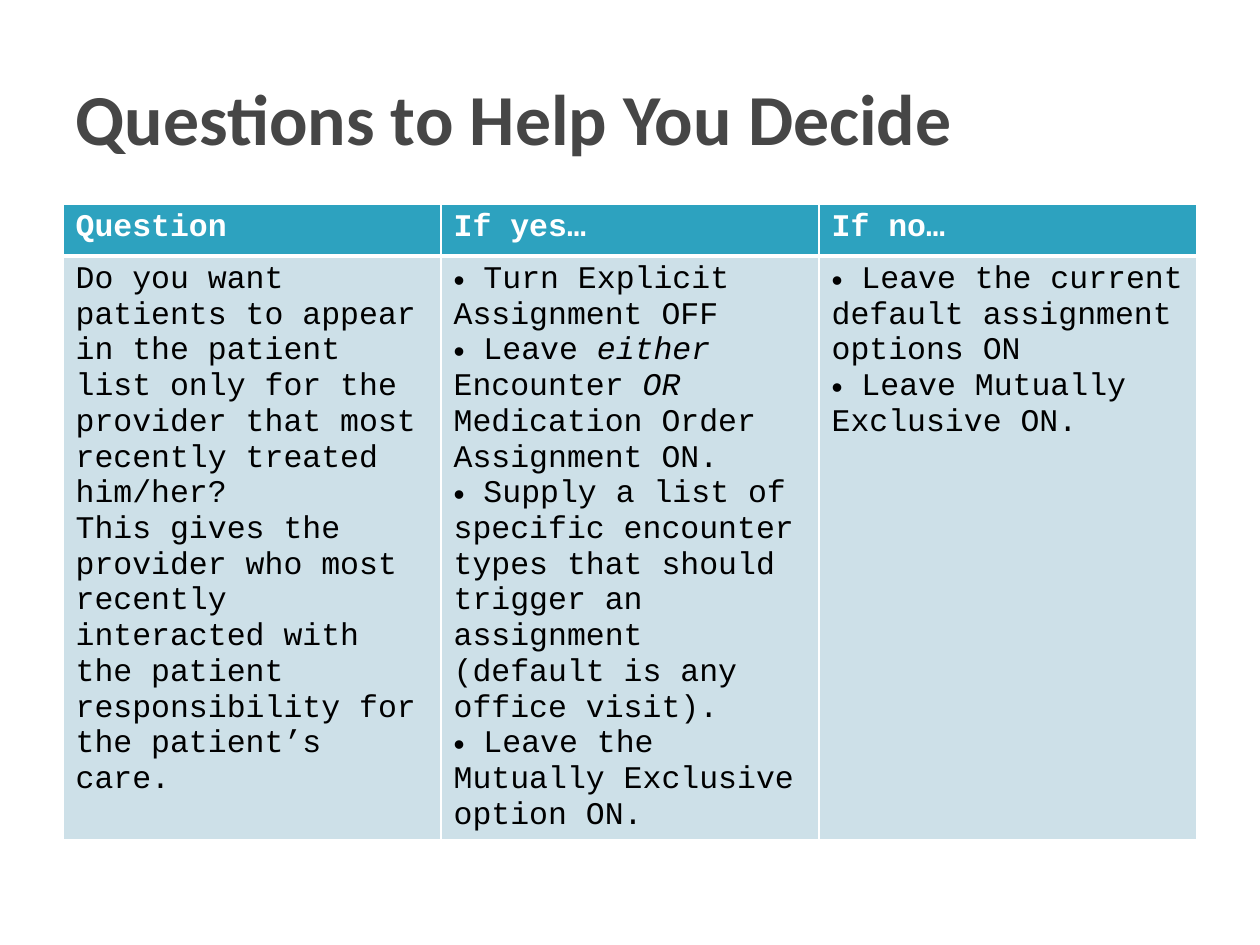
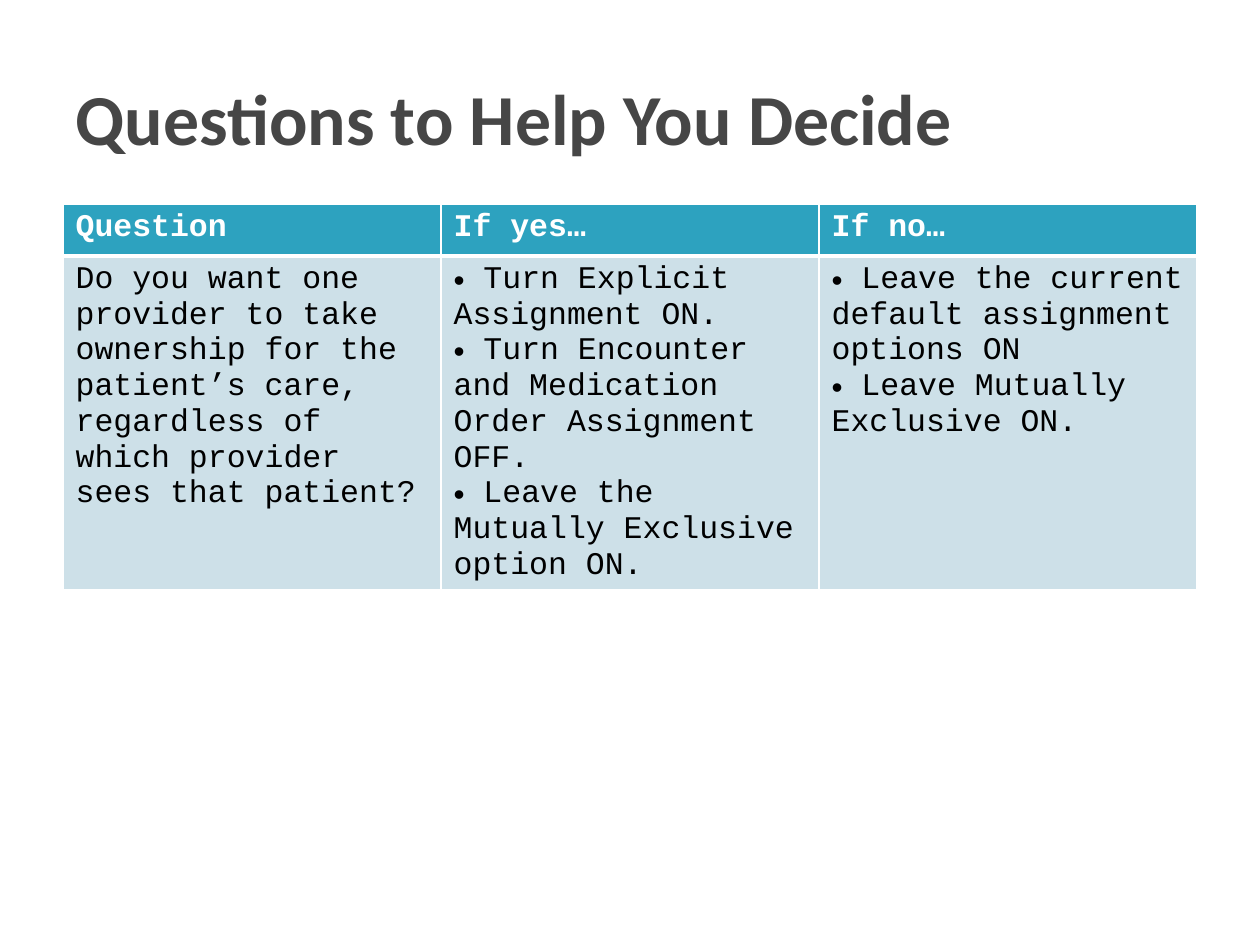
from lxml import etree
from pptx import Presentation
from pptx.dml.color import RGBColor
from pptx.enum.text import MSO_ANCHOR, MSO_AUTO_SIZE, PP_ALIGN
from pptx.oxml.ns import qn
from pptx.util import Pt

LEFT, MIDDLE, FIXED = PP_ALIGN.LEFT, MSO_ANCHOR.MIDDLE, MSO_AUTO_SIZE.NONE
SCALE = 914400 / 126
HUES = {"title": "464646", "head": "2DA2BF", "body": "CDE0E8",
        "light": "FFFFFF", "dark": "000000"}
TITLE = "Questions to Help You Decide"
HEADS = ["Question", "If yes…", "If no…"]
STAY = [" Leave the current default assignment options ON",
        " Leave Mutually Exclusive ON."]
KEEP = " Leave the Mutually Exclusive option ON."
PAGES = [
    (582,
     "Do you want patients to appear in the patient list only for the "
     "provider that most recently treated him/her?\n"
     "This gives the provider who most recently interacted with the patient "
     "responsibility for the patient’s care.",
     [" Turn Explicit Assignment OFF",
      " Leave *either* Encounter *OR* Medication Order Assignment ON.",
      " Supply a list of specific encounter types that should trigger an "
      "assignment (default is any office visit).",
      KEEP]),
    (332,
     "Do you want one provider to take ownership for the patient’s care, "
     "regardless of which provider sees that patient?",
     [" Turn Explicit Assignment ON.",
      " Turn Encounter and Medication Order Assignment OFF.",
      KEEP]),
]


def px(num):
    return round(num * SCALE)


def write(para, text, face, size, hue, bold):
    for i, part in enumerate(text.split("*")):
        for j, line in enumerate(part.split("\n")):
            if j:
                para.add_line_break()
            run = para.add_run()
            run.text = line
            font = run.font
            font.name, font.size, font.bold = face, Pt(size), bold
            font.italic = i % 2 == 1
            font.color.rgb = RGBColor.from_string(HUES[hue])


deck = Presentation()
deck.slide_width, deck.slide_height = px(1260), px(945)

for tall, ask, yes in PAGES:
    slide = deck.slides.add_slide(deck.slide_layouts[5])
    title = slide.shapes.title
    title.left, title.top = px(63), px(38)
    title.width, title.height = px(1134), px(158)
    frame = title.text_frame
    frame.auto_size, frame.vertical_anchor = FIXED, MIDDLE
    frame.paragraphs[0].alignment = LEFT
    write(frame.paragraphs[0], TITLE, "Calibri", 41, "title", True)

    table = slide.shapes.add_table(
        2, 3, px(63), px(204), px(1134), px(52 + tall)).table
    table.rows[0].height, table.rows[1].height = px(52), px(tall)
    rows = [[[head] for head in HEADS], [[ask], yes, STAY]]
    for r, row in enumerate(rows):
        for c, lines in enumerate(row):
            cell = table.cell(r, c)
            edges = {"L": 1, "R": 1, "T": 3 if r else 1, "B": 1 if r else 3}
            for side, wide in edges.items():
                edge = etree.SubElement(cell._tc.get_or_add_tcPr(),
                                        qn("a:ln" + side), w=str(Pt(wide)))
                fill = etree.SubElement(edge, qn("a:solidFill"))
                etree.SubElement(fill, qn("a:srgbClr"), val=HUES["light"])
            cell.fill.solid()
            cell.fill.fore_color.rgb = RGBColor.from_string(
                HUES["body" if r else "head"])
            for n, line in enumerate(lines):
                frame = cell.text_frame
                para = frame.add_paragraph() if n else frame.paragraphs[0]
                if r and c:
                    props = para._p.get_or_add_pPr()
                    props.set("marL", "0")
                    props.set("indent", "0")
                    etree.SubElement(props, qn("a:buFont"), typeface="Arial")
                    etree.SubElement(props, qn("a:buChar"), char="•")
                write(para, line, "Courier New", 18,
                      "dark" if r else "light", r == 0)

deck.save("out.pptx")
